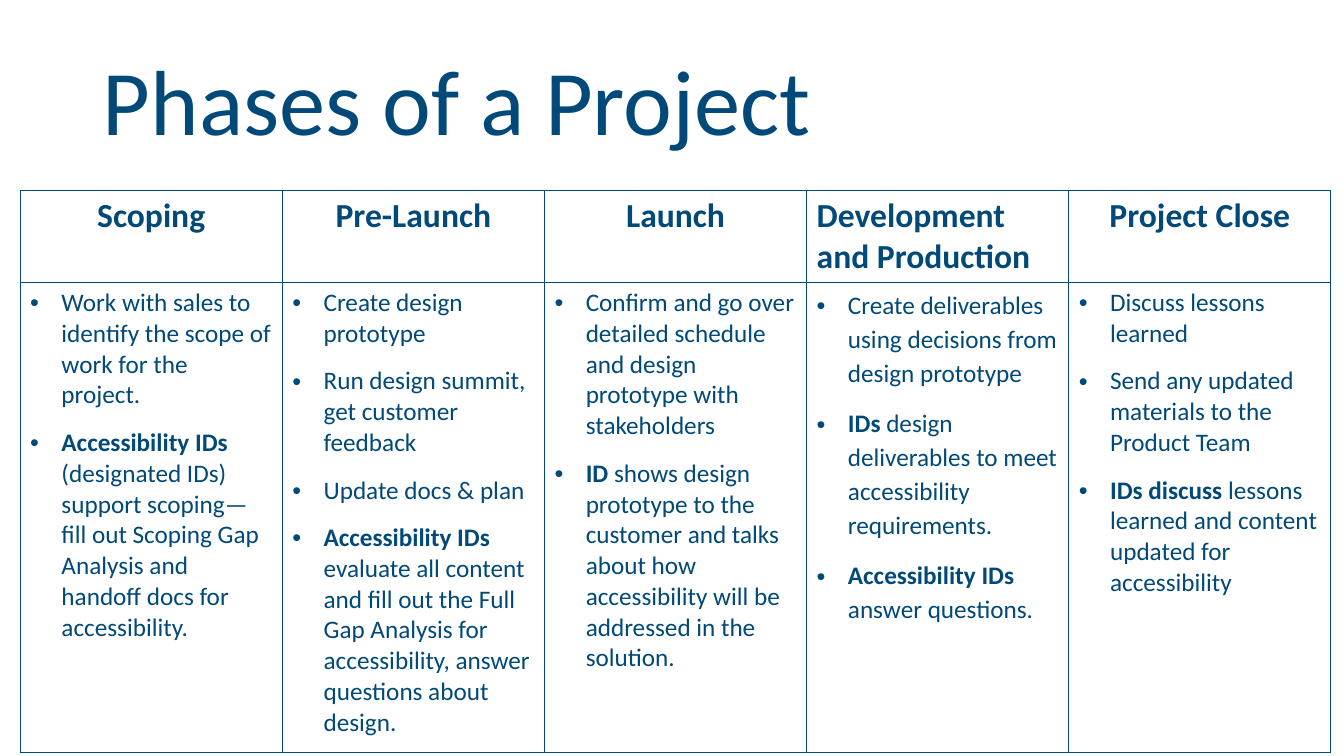
from lxml import etree
from pptx import Presentation
from pptx.dml.color import RGBColor
from pptx.enum import text
from pptx.oxml import ns
from pptx.util import Inches, Pt

BLUE = "004978"

# Each phase: heading, line spacing, list of (bold lead, remaining text)
PHASES = [
    ("Scoping", 1.0, [
        ("", "Work with sales to identify the scope of work for the project."),
        ("Accessibility IDs ", "(designated IDs) support scoping—fill out Scoping Gap "
         "Analysis and handoff docs for accessibility."),
    ]),
    ("Pre-Launch", 1.0, [
        ("", "Create design prototype"),
        ("", "Run design summit, get customer feedback"),
        ("", "Update docs & plan"),
        ("Accessibility IDs ", "evaluate all content and fill out the Full Gap Analysis "
         "for accessibility, answer questions about design."),
    ]),
    ("Launch", 1.0, [
        ("", "Confirm and go over detailed schedule and design prototype with stakeholders"),
        ("ID ", "shows design prototype to the customer and talks about how "
         "accessibility will be addressed in the solution."),
    ]),
    ("Development and Production", 1.1, [
        ("", "Create deliverables using decisions from design prototype"),
        ("IDs ", "design deliverables to meet accessibility requirements."),
        ("Accessibility IDs ", "answer questions."),
    ]),
    ("Project Close", 1.0, [
        ("", "Discuss lessons learned"),
        ("", "Send any updated materials to the Product Team"),
        ("IDs discuss", " lessons learned and content updated for accessibility"),
    ]),
]


def color(hex_string):
    return RGBColor.from_string(hex_string)


class SlideBuilder:
    def __init__(self, slide, font_name, ink):
        self.slide = slide
        self.font_name = font_name
        self.ink = ink

    def style(self, paragraph, size, bold=None):
        font = paragraph.font
        font.name = self.font_name
        font.size = Pt(size)
        font.bold = bold
        font.color.rgb = color(self.ink)

    def title(self, words, left, top, width, height):
        title = self.slide.shapes.title
        title.left, title.top = Inches(left), Inches(top)
        title.width, title.height = Inches(width), Inches(height)
        frame = title.text_frame
        frame.text = words
        frame.word_wrap = True
        frame.vertical_anchor = text.MSO_ANCHOR.MIDDLE
        paragraph = frame.paragraphs[0]
        paragraph.alignment = text.PP_ALIGN.LEFT
        paragraph.line_spacing = 0.9
        self.style(paragraph, 66)

    def border(self, cell):
        properties = cell._tc.get_or_add_tcPr()
        for side in ("lnL", "lnR", "lnT", "lnB"):
            line = etree.SubElement(properties, ns.qn(f"a:{side}"), w=str(Pt(1)))
            fill = etree.SubElement(line, ns.qn("a:solidFill"))
            etree.SubElement(fill, ns.qn("a:srgbClr"), val=self.ink)

    def heading(self, cell, words):
        cell.text = words
        paragraph = cell.text_frame.paragraphs[0]
        two_lines = len(words) > 20
        paragraph.alignment = text.PP_ALIGN.LEFT if two_lines else text.PP_ALIGN.CENTER
        self.style(paragraph, 24, bold=True)

    def bullet(self, paragraph, lead, rest, spacing):
        properties = paragraph._p.get_or_add_pPr()
        properties.set("marL", str(Inches(0.31)))
        properties.set("indent", str(Inches(-0.31)))
        etree.SubElement(properties, ns.qn("a:buFont"), typeface="Arial")
        etree.SubElement(properties, ns.qn("a:buChar"), char="•")
        paragraph.line_spacing = spacing
        paragraph.space_after = Pt(12)
        self.style(paragraph, 18)
        for words, bold in ((lead, True), (rest, False)):
            if words:
                run = paragraph.add_run()
                run.text = words
                run.font.bold = bold

    def bullets(self, cell, items, spacing):
        frame = cell.text_frame
        for index, (lead, rest) in enumerate(items):
            paragraph = frame.add_paragraph() if index else frame.paragraphs[0]
            self.bullet(paragraph, lead, rest, spacing)
        if spacing == 1.0:
            paragraph.space_after = Pt(0)

    def phase_table(self, phases, left, top, column_width, row_heights):
        frame = self.slide.shapes.add_table(
            len(row_heights), len(phases), Inches(left), Inches(top),
            Inches(column_width * len(phases)), Inches(sum(row_heights)))
        table = frame.table
        table.first_row = table.horz_banding = False
        for row, height in zip(table.rows, row_heights):
            row.height = Inches(height)
        for column, (name, spacing, items) in enumerate(phases):
            table.columns[column].width = Inches(column_width)
            self.heading(table.cell(0, column), name)
            self.bullets(table.cell(1, column), items, spacing)
        for cell in table.iter_cells():
            self.border(cell)
            cell.fill.background()


def main():
    presentation = Presentation()
    presentation.slide_width = Inches(13.33)
    presentation.slide_height = Inches(7.5)
    slide = presentation.slides.add_slide(presentation.slide_layouts[5])
    builder = SlideBuilder(slide, "Calibri", BLUE)
    builder.title("Phases of a Project", 0.92, 0.32, 11.5, 1.45)
    builder.phase_table(PHASES, 0.2, 1.89, 2.6, (0.84, 4.66))
    presentation.save("out.pptx")


if __name__ == "__main__":
    main()
